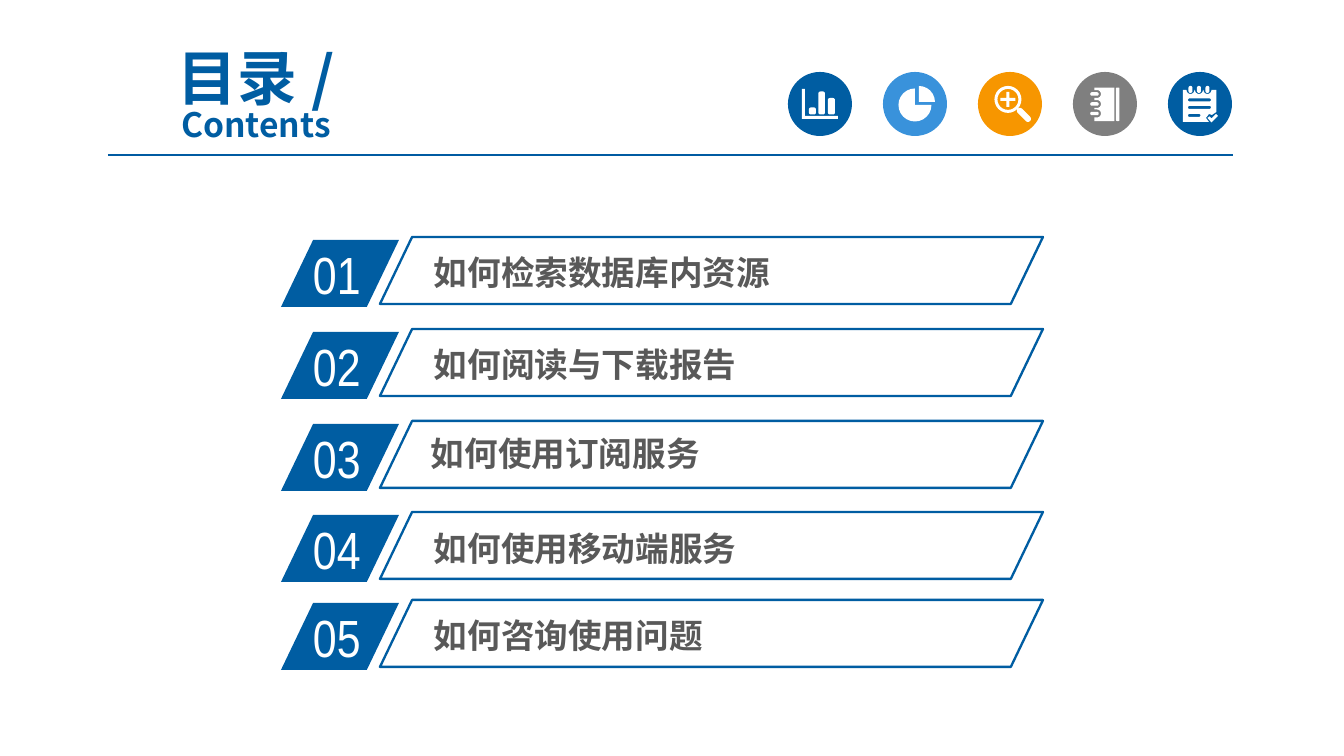
import math

import pptx
import pptx.dml.color
import pptx.enum.shapes
import pptx.enum.text
import pptx.oxml
import pptx.util

SCALE = 914400 / 134.4
BLUE, SKY, ORANGE, GREY = "005DA2", "3992DB", "F79600", "7F7F7F"
WHITE, INK, RULE = "FFFFFF", "595959", "005BA2"
HEADING_FONT, NUMBER_FONT = "Noto Sans CJK SC", "Arial Narrow"
SHAPE = pptx.enum.shapes.MSO_SHAPE
ITEMS = [
    # text, row top, label shift
    ("如何检索数据库内资源", 237, (0, 0)),
    ("如何阅读与下载报告", 329, (0, 0)),
    ("如何使用订阅服务", 421, (-3, -3)),
    ("如何使用移动端服务", 512, (0, 1)),
    ("如何咨询使用问题", 600, (0, 0)),
]


def px(value):
    return pptx.util.Emu(round(value * SCALE))


def color(value):
    return pptx.dml.color.RGBColor.from_string(value)


def write(para, text, size=18, font=HEADING_FONT, fill=INK, bold=False):
    span = para.add_run()
    span.text = text
    span.font.size = pptx.util.Pt(size)
    span.font.name = font
    span.font.bold = bold
    span.font.color.rgb = color(fill)
    east = pptx.oxml.parse_xml(
        '<a:ea xmlns:a="http://schemas.openxmlformats.org/drawingml/2006/main"'
        f' typeface="{font}"/>')
    span.font.latin_element = None
    return span, east


def add_text(para, text, **style):
    """Write a span and give its East Asian text the same font."""
    span, east = write(para, text, **style)
    span._r.get_or_add_rPr().find(pptx.oxml.ns.qn("a:latin")).addnext(east)


def add_box(page, left, top, width, height, text, inset=(13, 7), **style):
    box = page.shapes.add_textbox(px(left), px(top), px(width), px(height))
    frame = box.text_frame
    frame.word_wrap = True
    frame.margin_left = frame.margin_right = px(inset[0])
    frame.margin_top = frame.margin_bottom = px(inset[1])
    add_text(frame.paragraphs[0], text, **style)


def paint(shape, fill=None, line=None, weight=1.25):
    shape.shadow.inherit = False
    if fill:
        shape.fill.solid()
        shape.fill.fore_color.rgb = color(fill)
    else:
        shape.fill.background()
    if line:
        shape.line.color.rgb = color(line)
        shape.line.width = pptx.util.Pt(weight)
    else:
        shape.line.fill.background()


def add_preset(page, kind, left, top, width, height, **look):
    shape = page.shapes.add_shape(kind, px(left), px(top), px(width), px(height))
    paint(shape, **look)
    return shape


def arc(x, y, radius, start=0, end=360):
    steps = max(6, round(abs(end - start) / 15))
    angles = [math.radians(start + (end - start) * i / steps) for i in range(steps + 1)]
    return [(x + radius * math.cos(a), y + radius * math.sin(a)) for a in angles]


def pill(x1, y1, x2, y2, width):
    """Outline of a thick stroke with round ends."""
    turn = math.degrees(math.atan2(y2 - y1, x2 - x1))
    return (arc(x2, y2, width / 2, turn - 90, turn + 90)
            + arc(x1, y1, width / 2, turn + 90, turn + 270))


def rounded(left, top, right, bottom, r=2):
    return (arc(right - r, top + r, r, -90, 0) + arc(right - r, bottom - r, r, 0, 90)
            + arc(left + r, bottom - r, r, 90, 180) + arc(left + r, top + r, r, 180, 270))


def bar_glyph():
    axes = [(14, 17), (17, 17), (17, 44), (50, 44), (50, 47), (14, 47)]
    bars = [(21, 35.5, 28), (30.5, 19.5, 37), (40, 26, 47)]
    return [axes] + [rounded(left, top, right, 42.5) for left, top, right in bars]


def pie_glyph():
    return [[(36, 30)] + arc(36, 30, 16, -90, 0), [(32, 33)] + arc(32, 33, 16.5, 0, 270)]


def lens_glyph():
    x, y, long, thin = 30, 27.5, 7.5, 1.5
    corner = [(long, -thin), (long, thin), (thin, thin)]
    plus = []
    for _ in range(4):
        plus += [(x + a, y + b) for a, b in corner]
        corner = [(-b, a) for a, b in corner]
    return [arc(x, y, 13.5), arc(x, y, 10.5), plus, pill(42, 39, 50, 47, 6)]


def notebook_glyph():
    rings = (41.5, 32, 22)
    cover = [(41.5, 15.5), (41.5, 49), (21.5, 49)]
    for y in rings:
        cover += [(21.5, y + 4)] + arc(24, y, 4, 90, -90) + [(21.5, y - 4)]
    cover.append((21.5, 15.5))
    return [cover, rounded(43, 15.5, 46.5, 49, 1)] + [pill(19, y, 24, y, 3.5) for y in rings]


def checklist_glyph():
    rings = (22.5, 31, 39.5)
    sheet = [(15, 18)]
    for x in rings:
        sheet += arc(x, 18, 4, 180, 0)
    sheet += [(48.5, 18), (48.5, 40), (44, 43), (41, 42), (38, 46), (41, 50), (15, 50)]
    tick = [(39.5, 46), (41.5, 44.5), (43.5, 46.5), (48, 42), (50, 44), (43.5, 50.5)]
    lines = [pill(21.5, y, right, y, 3) for y, right in ((28, 41.5), (35.5, 41.5), (43.5, 31))]
    return [sheet, tick] + lines + [pill(x, 16, x, 19, 4) for x in rings]


def add_icon(page, left, top, size, fill, contours):
    add_preset(page, SHAPE.OVAL, left, top, size, size, fill=fill)
    paths = [[(px(left + x), px(top + y)) for x, y in points] for points in contours]
    builder = page.shapes.build_freeform(*paths[0][0])
    for index, points in enumerate(paths):
        if index:
            builder.move_to(*points[0])
        builder.add_line_segments(points[1:], close=True)
    paint(builder.convert_to_shape(), fill=WHITE)


def add_header(page, left, top, width, height):
    title = page.shapes.title
    title.left, title.top, title.width, title.height = map(px, (left, top, width, height))
    frame = title.text_frame
    frame.auto_size = pptx.enum.text.MSO_AUTO_SIZE.NONE
    frame.vertical_anchor = pptx.enum.text.MSO_ANCHOR.MIDDLE
    para = frame.paragraphs[0]
    para.alignment = pptx.enum.text.PP_ALIGN.CENTER
    para.line_spacing = 0.8
    add_text(para, "目录 /", size=32, fill=BLUE, bold=True)
    para.add_line_break()
    add_text(para, "Contents", fill=BLUE, bold=True)

    rule = page.shapes.add_connector(
        pptx.enum.shapes.MSO_CONNECTOR.STRAIGHT,
        px(left + 18), px(top + 92), px(left + 1143), px(top + 92))
    rule.line.color.rgb = color(RULE)
    rule.line.width = pptx.util.Pt(0.75)
    rule._element.spPr.append(pptx.oxml.parse_xml(
        '<a:effectLst xmlns:a="http://schemas.openxmlformats.org/drawingml/2006/main"/>'))


def add_icon_row(page, left, top, size, pitch):
    icons = [(BLUE, bar_glyph), (SKY, pie_glyph), (ORANGE, lens_glyph),
             (GREY, notebook_glyph), (BLUE, checklist_glyph)]
    for index, (fill, glyph) in enumerate(icons):
        add_icon(page, left + index * pitch, top, size, fill, glyph())


def add_item(page, left, top, number, text, shift):
    tab = add_preset(page, SHAPE.PARALLELOGRAM, left, top + 3, 118, 67, fill=BLUE)
    frame = add_preset(page, SHAPE.PARALLELOGRAM, left + 99, top, 663, 67, line=BLUE)
    for shape in (tab, frame):
        shape.adjustments[0] = 0.48
    add_box(page, left + 19, top - 2, 113, 77, f"{number:02d}",
            size=28, font=NUMBER_FONT, fill=WHITE)
    add_box(page, left + 144 + shift[0], top + 10 + shift[1], 586, 51, text,
            inset=(9, 5), bold=True)


def main():
    deck = pptx.Presentation()
    deck.slide_width, deck.slide_height = px(1344), px(756)
    page = deck.slides.add_slide(deck.slide_layouts[5])
    add_header(page, 90, 63, 332, 73)
    add_icon_row(page, 788, 72, 64, 95)
    for number, (text, top, shift) in enumerate(ITEMS, 1):
        add_item(page, 281, top, number, text, shift)
    deck.save("out.pptx")


if __name__ == "__main__":
    main()
